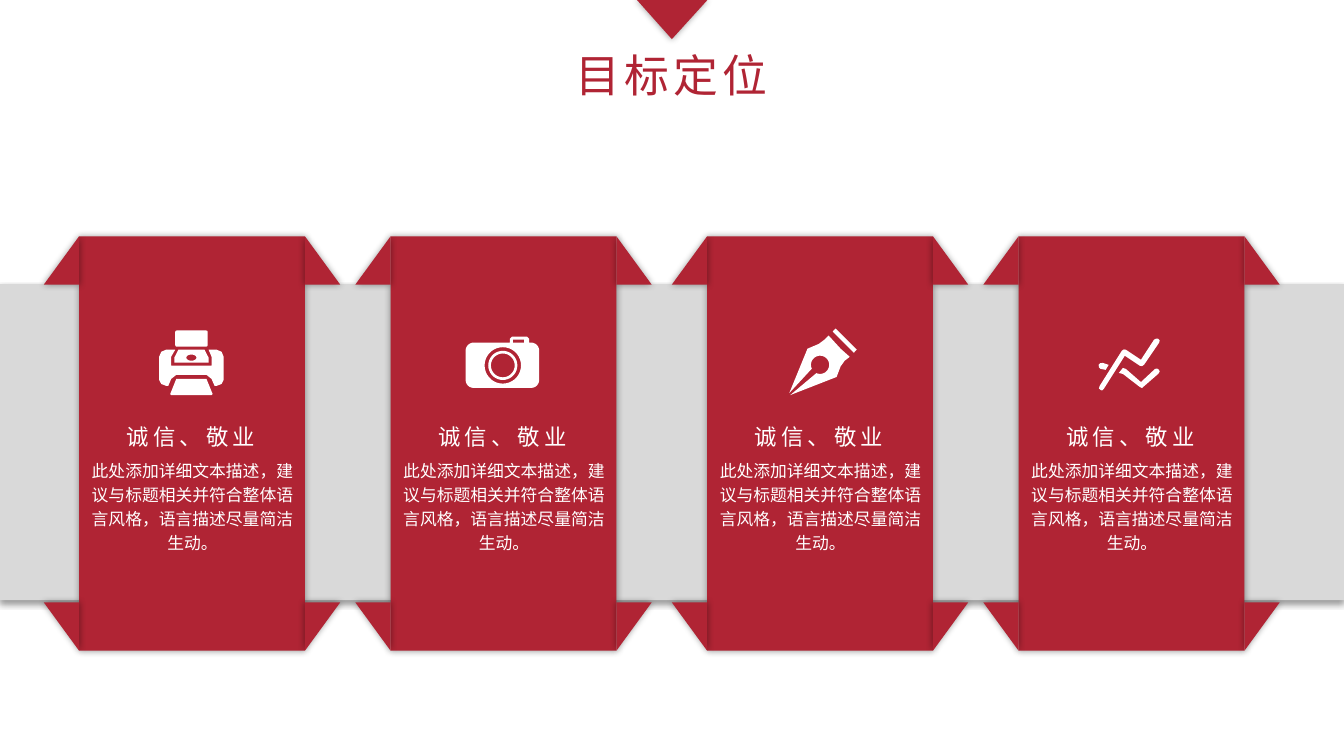
from math import cos, radians, sin

from lxml import etree
from pptx import Presentation
from pptx.dml.color import RGBColor
from pptx.enum.shapes import MSO_SHAPE
from pptx.enum.text import MSO_ANCHOR, PP_ALIGN
from pptx.oxml.ns import qn
from pptx.util import Pt

RECT, TRI, FOLD = MSO_SHAPE.RECTANGLE, MSO_SHAPE.ISOSCELES_TRIANGLE, MSO_SHAPE.RIGHT_TRIANGLE
TOP, MIDDLE = MSO_ANCHOR.TOP, MSO_ANCHOR.MIDDLE
CENTER = PP_ALIGN.CENTER
HUES = {"red": "B02434", "band": "D9D9D9", "white": "FFFFFF", "black": "000000"}
FACE = "Noto Sans CJK SC"
WIDE, HIGH = 960, 540
CARD_W, CARD_H, CARD_TOP = 161.3, 296, 168.8
FOLD_W, FOLD_H = 25.2, 34.5

HEAD = "诚信、敬业"
BODY = "此处添加详细文本描述，建议与标题相关并符合整体语言风格，语言描述尽量简洁生动。"


# Outlines for icons, in points from the icon's corner
def arc(cx, cy, rx, ry, start=0, end=360, steps=36):
    turns = [radians(start + (end - start) * i / steps) for i in range(steps + 1)]
    return [(cx + rx * cos(t), cy + ry * sin(t)) for t in turns]


def block(x, y, w, h, r=0):
    spots = [(x + w - r, y + h - r), (x + r, y + h - r), (x + r, y + r), (x + w - r, y + r)]
    return [p for i, (cx, cy) in enumerate(spots)
            for p in arc(cx, cy, r, r, 90 * i, 90 * i + 90, 6 if r else 1)]


PRINTER = [
    block(11.5, 0, 23.1, 11.5, 1),
    [(12.2, 34.6), (33.8, 34.6), (38.2, 45.4), (37.4, 46.1), (8.6, 46.1), (7.9, 45.4)],
    [(10.8, 19.4), (13.7, 13.7), (32.4, 13.7), (35.3, 19.4), (35.3, 23), (10.8, 23)],
    arc(23, 19.4, 3.6, 2.2),
    [(41, 13.7), (35.3, 13.7), (37.4, 18.7), (37.4, 25.2), (8.6, 25.2), (8.6, 18.7),
     (11.5, 13.7), (5, 13.7), (1.5, 15.2), (0, 18.7), (0, 35.3), (1.5, 38.2), (5, 39.6),
     (6.5, 39.6), (8.6, 34.6), (12.2, 31.7), (33.8, 31.7), (37.4, 34.6), (39.6, 39.6),
     (41, 39.6), (44.6, 38.2), (46, 35.3), (46, 18.7), (44.6, 15.2)],
]
CAMERA = [
    block(0, 4.3, 52.6, 32.4, 5.8),
    [(31.7, 4.3), (31.7, 1.5), (33.2, 0), (43.9, 0), (45.4, 1.5), (45.4, 4.3)],
    block(33.8, 2.2, 8, 2.1),
    *[arc(26.6, 20.6, r, r) for r in (13, 10.4, 8.5)],
]
PEN = [
    [(36.7, 14.4), (28.1, 5), (25.2, 7.9), (21, 11), (13, 14.4), (0, 46.1),
     *arc(22, 25.9, 6.5, 6.5, 155, 474),
     (0.7, 47.5), (33.8, 34.6), (36.7, 27), (39.6, 23), (43.2, 20.2)],
    [(33.1, 0), (48.2, 15.1), (46.1, 17.3), (31, 2.2)],
]
TREND = [
    [(18.7, 12.2), (29.5, 19.4), (31, 19.6), (32.4, 18.7), (43.2, 2.9), (43.6, 1.2),
     (42.5, 0), (41, 0), (39.6, 0.7), (30.2, 15.1), (19.4, 7.9), (18, 7.7), (16.6, 8.6),
     (0.7, 33.8), (0.2, 35.6), (1.4, 36.7), (2.6, 37), (3.6, 36)],
    [(40.3, 21.6), (30.2, 31), (19.4, 21.6), (17.3, 20.9), (14.4, 24.5), (17.3, 25.2),
     (29.5, 34.6), (31, 35.3), (31.7, 34.6), (42.5, 25.2), (43.6, 23.6), (43.2, 22.3),
     (41.8, 21.4)],
    [(1.4, 21.6), (5, 22.3), (7.2, 18.7), (2.9, 17.3), (1, 17.6), (0, 18.7), (0.2, 20.5)],
]
# Card left edge, icon, icon offset in the card
CARDS = [
    (56.5, PRINTER, 57.2, 67.3),
    (279, CAMERA, 53.6, 71.6),
    (505.1, PEN, 58.7, 65.9),
    (727.6, TREND, 57.2, 73.1),
]


# Shared helpers
def paint(shape, hue):
    shape.shadow.inherit = False
    shape.fill.solid()
    shape.fill.fore_color.rgb = RGBColor.from_string(HUES[hue])
    shape.line.fill.background()


def add_part(shapes, kind, x, y, w, h, hue, flips=(), blur=5, dist=0, angle=0):
    part = shapes.add_shape(kind, Pt(x), Pt(y), Pt(w), Pt(h))
    paint(part, hue)
    props = part._element.spPr
    for flip in flips:
        props.find(qn("a:xfrm")).set(flip, "1")
    cast = etree.SubElement(props.find(qn("a:effectLst")), qn("a:outerShdw"),
                            blurRad=str(Pt(blur)), dist=str(Pt(dist)),
                            dir=str(angle * 60000), algn="ctr", rotWithShape="0")
    tint = etree.SubElement(cast, qn("a:srgbClr"), val=HUES["black"])
    etree.SubElement(tint, qn("a:alpha"), val="40000")
    return part


def set_text(box, text, size, hue, gap=0, lines=1.0, wrap=True, anchor=TOP):
    frame = box.text_frame
    frame.word_wrap = wrap
    frame.vertical_anchor = anchor
    para = frame.paragraphs[0]
    para.text = text
    para.alignment = CENTER
    para.line_spacing = lines
    font = para.font
    font.size, font.name = Pt(size), FACE
    font.color.rgb = RGBColor.from_string(HUES[hue])
    etree.SubElement(font._element, qn("a:ea"), typeface=FACE)
    font._element.set("spc", str(gap * 100))
    return para


def add_icon(shapes, paths, x, y):
    # Hundredths of a point keep the outline smooth
    paths = [[(px * 100, py * 100) for px, py in path] for path in paths]
    pen = shapes.build_freeform(*paths[0][0], scale=127.0)
    for i, path in enumerate(paths):
        if i:
            pen.move_to(*path[0])
        pen.add_line_segments(path[1:], close=True)
    paint(pen.convert_to_shape(Pt(x), Pt(y)), "white")


# Title and the marker above it
def add_title(slide, x, y, w, h):
    title = slide.shapes.title
    title.left, title.top, title.width, title.height = Pt(x), Pt(y), Pt(w), Pt(h)
    set_text(title, "目标定位", 32, "red", gap=3, anchor=MIDDLE)
    mark = add_part(slide.shapes, TRI, x + 192.2, 0, 50.4, 28, "red", ["flipV"])
    mark.adjustments[0] = 0.495


# One folded card with its icon and text
def add_card(slide, x, y, w, h, paths, dx, dy):
    shapes = slide.shapes.add_group_shape().shapes
    add_part(shapes, RECT, x, y, w, h, "red")
    for left, side in ((x - FOLD_W, ["flipH"]), (x + w, [])):
        for top, end in ((y, []), (y + h - FOLD_H, ["flipV"])):
            add_part(shapes, FOLD, left, top, FOLD_W, FOLD_H, "red", side + end)
    add_icon(shapes, paths, x + dx, y + dy)
    head = shapes.add_textbox(Pt(x + 24.9), Pt(y + 120.6), Pt(110), Pt(33))
    set_text(head, HEAD, 16, "white", gap=3, lines=1.5, wrap=False)
    body = shapes.add_textbox(Pt(x), Pt(y + 153.8), Pt(w + 0.7), Pt(77))
    set_text(body, BODY, 12, "white", lines=1.2).space_before = Pt(2.4)


def main():
    deck = Presentation()
    deck.slide_width, deck.slide_height = Pt(WIDE), Pt(HIGH)
    slide = deck.slides.add_slide(deck.slide_layouts[5])
    add_title(slide, 262.8, 31, 434.2, 44)
    # Band behind the cards
    add_part(slide.shapes, RECT, 0, 203, WIDE, 225.7, "band", blur=4, dist=3, angle=90)
    for left, paths, dx, dy in CARDS:
        add_card(slide, left, CARD_TOP, CARD_W, CARD_H, paths, dx, dy)
    deck.save("out.pptx")


if __name__ == "__main__":
    main()
